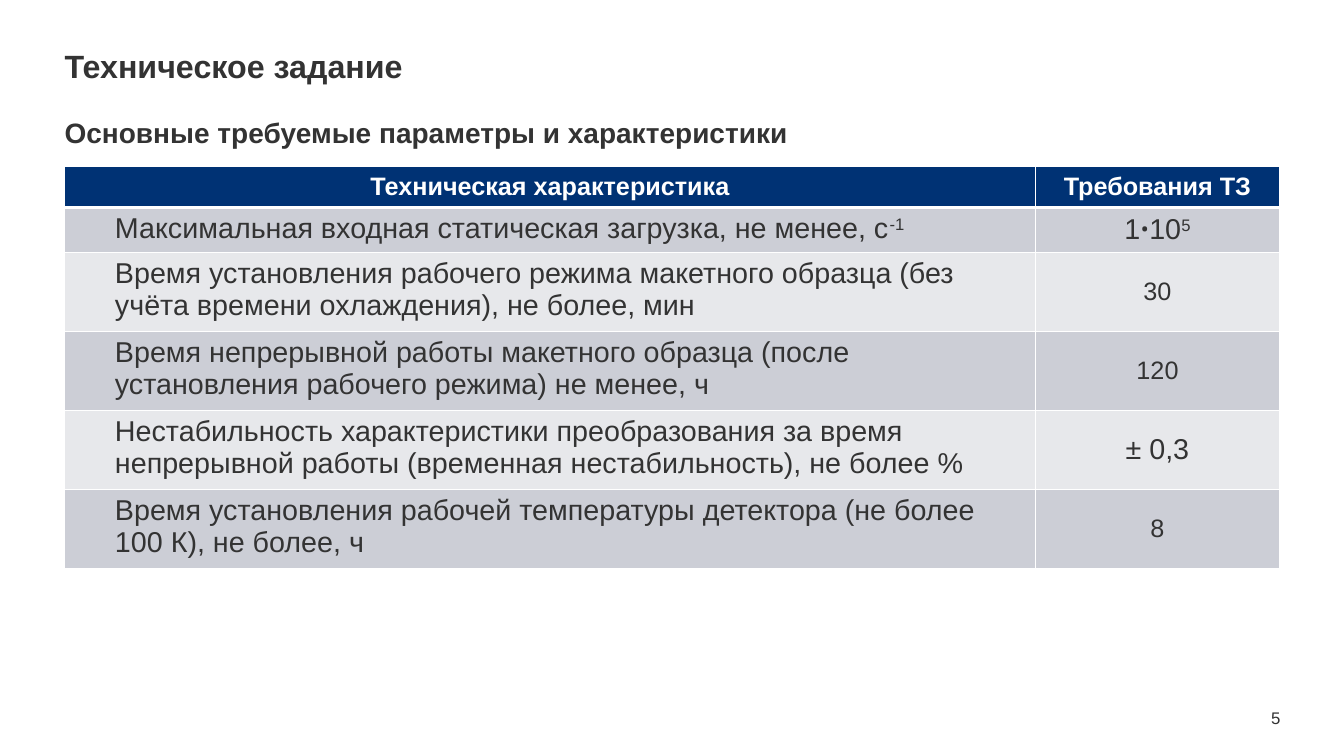
from dataclasses import dataclass

from pptx import Presentation
from pptx.dml.color import RGBColor
from pptx.enum.text import MSO_ANCHOR as Anchor, PP_ALIGN as Align
from pptx.oxml.ns import qn
from pptx.util import Pt
from lxml.etree import SubElement

# Content: every cell is a list of (text, size role) runs
TITLE = "Техническое задание"
SUBTITLE = "Основные требуемые параметры и характеристики"
PAGE_NUMBER = "5"
HEADER = ["Техническая характеристика", "Требования ТЗ"]
REQUIREMENTS = [
    ([("Максимальная входная статическая загрузка, не менее, с", "body"), ("-1", "super")],
     [("1ꞏ10", "body"), ("5", "super")]),
    ([("Время установления рабочего режима макетного образца "
       "(без учёта времени охлаждения), не более, мин", "body")],
     [("30", "value")]),
    ([("Время непрерывной работы макетного образца "
       "(после установления рабочего режима) не менее, ч", "body")],
     [("120", "value")]),
    ([("Нестабильность характеристики преобразования за время "
       "непрерывной работы (временная нестабильность), не более %", "body")],
     [("± 0,3", "body")]),
    ([("Время установления рабочей температуры детектора "
       "(не более 100 К), не более, ч", "body")],
     [("8", "value")]),
]


@dataclass(frozen=True)
class Theme:
    font: str = "Arial"
    ink: str = "333333"
    white: str = "FFFFFF"
    navy: str = "003274"
    bands: tuple = ("CCCED6", "E7E8EB")
    title: float = 23
    subtitle: float = 20
    header: float = 18
    body: float = 20.5
    value: float = 18
    number: float = 12


THEME = Theme()

# Layout in px, 100 px to the inch
PX = 9144
PAGE_SIZE = (1333, 750)
LEFT = 64
TITLE_BOX = (LEFT, 32, 898, 71)
SUBTITLE_BOX = (LEFT, 115, 799, 38)
NUMBER_BOX = (1220, 698, 50, 24)
TABLE_TOP = 165
COLUMNS = (963, 242)
ROWS = (41, 41, 74, 74, 74, 74)
INDENT = 40


def px(*lengths):
    return [length * PX for length in lengths]


def add_span(para, text, size, color=THEME.ink, bold=False, raised=False):
    span = para.add_run()
    span.text = text
    font = span.font
    font.name, font.size, font.bold = THEME.font, Pt(size), bold
    font.color.rgb = RGBColor.from_string(color)
    if raised:
        span._r.get_or_add_rPr().set("baseline", "30000")


def add_text(page, place, text, size, bold, anchor, align=Align.LEFT, bottom=0):
    frame = page.shapes.add_textbox(*px(*place)).text_frame
    frame.word_wrap = True
    frame.vertical_anchor = anchor
    frame.margin_left = frame.margin_top = frame.margin_right = 0
    frame.margin_bottom = bottom * PX
    para = frame.paragraphs[0]
    para.alignment = align
    add_span(para, text, size, bold=bold)
    return para


def style_cell(cell, fill, bottom_width):
    properties = cell._tc.get_or_add_tcPr()
    for side, width in (("L", 1), ("R", 1), ("T", 1), ("B", bottom_width)):
        line = SubElement(properties, qn(f"a:ln{side}"), w=str(Pt(width)))
        paint = SubElement(line, qn("a:solidFill"))
        SubElement(paint, qn("a:srgbClr"), val=THEME.white)
    cell.fill.solid()
    cell.fill.fore_color.rgb = RGBColor.from_string(fill)


def add_requirements(page):
    place = px(LEFT, TABLE_TOP, sum(COLUMNS), sum(ROWS))
    table = page.shapes.add_table(len(ROWS), len(COLUMNS), *place).table
    for column, width in zip(table.columns, COLUMNS):
        column.width = width * PX
    for row, height in zip(table.rows, ROWS):
        row.height = height * PX

    # Header row
    for index, text in enumerate(HEADER):
        cell = table.cell(0, index)
        style_cell(cell, THEME.navy, 3)
        cell.vertical_anchor = Anchor.MIDDLE
        para = cell.text_frame.paragraphs[0]
        para.alignment = Align.CENTER
        add_span(para, text, THEME.header, THEME.white, bold=True)

    # Banded rows: indented name, centred value
    for number, requirement in enumerate(REQUIREMENTS, start=1):
        for index, spans in enumerate(requirement):
            cell = table.cell(number, index)
            style_cell(cell, THEME.bands[(number - 1) % 2], 1)
            para = cell.text_frame.paragraphs[0]
            if index == 0:
                para._p.get_or_add_pPr().set("marL", str(INDENT * PX))
            else:
                cell.vertical_anchor = Anchor.MIDDLE
                para.alignment = Align.CENTER
            for text, role in spans:
                size = THEME.value if role == "value" else THEME.body
                add_span(para, text, size, raised=role == "super")


def main():
    deck = Presentation()
    deck.slide_width, deck.slide_height = px(*PAGE_SIZE)
    page = deck.slides.add_slide(deck.slide_layouts[6])

    # Headings, table and page number
    add_text(page, TITLE_BOX, TITLE, THEME.title, True, Anchor.MIDDLE, bottom=4)
    add_text(page, SUBTITLE_BOX, SUBTITLE, THEME.subtitle, True, Anchor.TOP)
    add_requirements(page)
    number = add_text(page, NUMBER_BOX, PAGE_NUMBER, THEME.number, False,
                      Anchor.BOTTOM, Align.RIGHT)
    number.line_spacing = 0.9
    deck.save("out.pptx")


if __name__ == "__main__":
    main()
